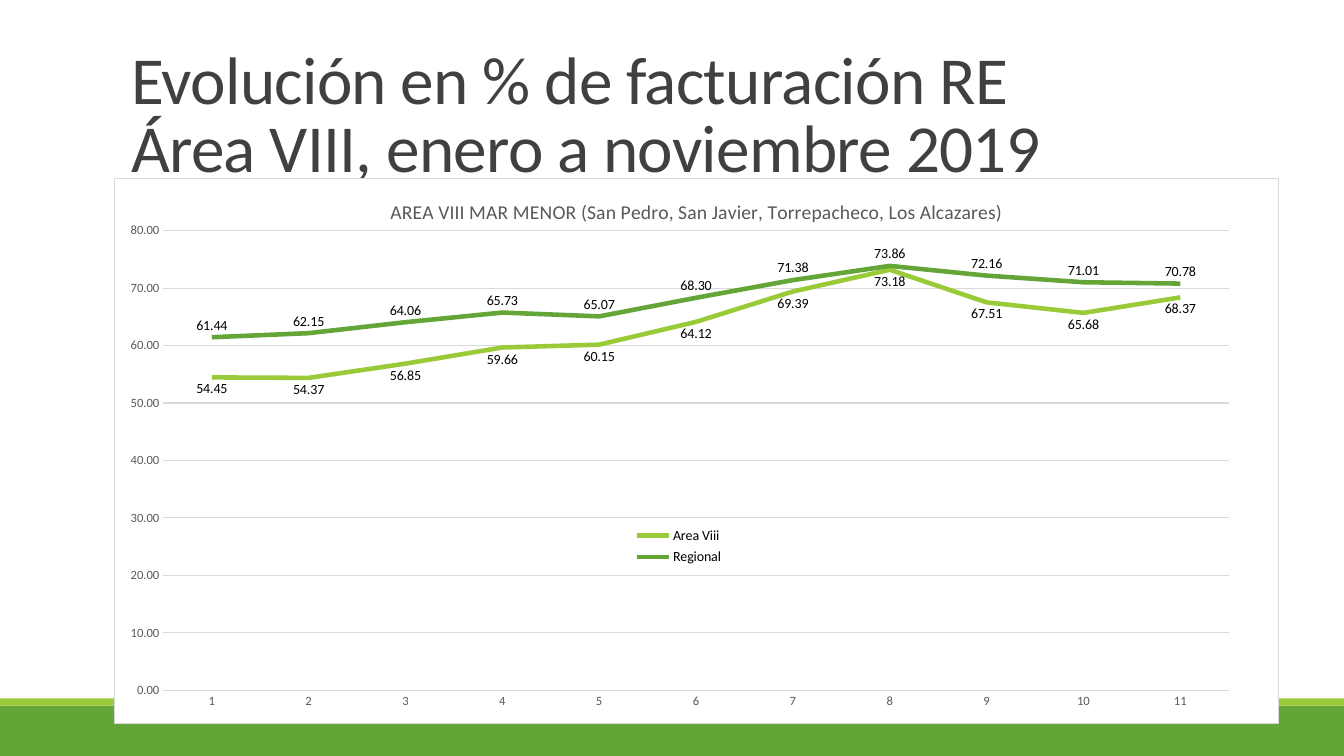
from dataclasses import dataclass

from lxml import etree
from pptx import Presentation
from pptx.chart.data import CategoryChartData
from pptx.dml.color import RGBColor
from pptx.enum import chart as charts, shapes, text
from pptx.oxml import ns
from pptx.util import Inches, Pt


@dataclass(frozen=True)
class Theme:
    font: str = "Calibri"
    lime: str = "99CB38"
    green: str = "63A537"
    heading: str = "404040"
    muted: str = "595959"
    grid: str = "D9D9D9"
    rule: str = "808080"
    black: str = "000000"
    white: str = "FFFFFF"
    heading_size: float = 48
    chart_title_size: float = 14
    label_size: float = 10
    axis_size: float = 9
    series_width: float = 3.25
    hairline: float = 0.75


THEME = Theme()
WIDTH, HEIGHT = 13.33, 7.5
BAND_TOP, STRIPE_HEIGHT = 7, 0.07
BELOW, ABOVE = charts.XL_LABEL_POSITION.BELOW, charts.XL_LABEL_POSITION.ABOVE
BILLING = [
    ("Area Viii", THEME.lime, BELOW, "#,##0.00",
     (54.45, 54.37, 56.85, 59.66, 60.15, 64.12, 69.39, 73.18, 67.51, 65.68, 68.37)),
    ("Regional", THEME.green, ABOVE, "0.00",
     (61.44, 62.15, 64.06, 65.73, 65.07, 68.30, 71.38, 73.86, 72.16, 71.01, 70.78)),
]


def rgb(value):
    return RGBColor.from_string(value)


def inches(box):
    return [Inches(length) for length in box]


def style_font(font, size, color):
    font.name, font.size, font.bold = THEME.font, Pt(size), False
    font.color.rgb = rgb(color)


def style_line(line, color, width):
    line.color.rgb, line.width = rgb(color), Pt(width)


def add_band(page, box, color):
    band = page.shapes.add_shape(shapes.MSO_SHAPE.RECTANGLE, *inches(box))
    band.shadow.inherit = False
    band.fill.solid()
    band.fill.fore_color.rgb = rgb(color)
    band.line.fill.background()


def add_backdrop(page):
    """Draw the footer bands and the rule under the heading."""
    add_band(page, (0, BAND_TOP, WIDTH, HEIGHT - BAND_TOP), THEME.green)
    add_band(page, (0, BAND_TOP - STRIPE_HEIGHT, WIDTH, STRIPE_HEIGHT), THEME.lime)
    rule = page.shapes.add_connector(
        shapes.MSO_CONNECTOR.STRAIGHT, *inches((1.31, 1.9, 12.21, 1.9)))
    style_line(rule.line, THEME.rule, 0.5)
    etree.SubElement(rule._element.spPr, ns.qn("a:effectLst"))


def fill_title(page, box, wording):
    title = page.shapes.title
    title.left, title.top, title.width, title.height = inches(box)
    frame = title.text_frame
    frame.text = wording
    frame.word_wrap = True
    frame.auto_size = text.MSO_AUTO_SIZE.NONE
    frame.vertical_anchor = text.MSO_ANCHOR.BOTTOM
    para = frame.paragraphs[0]
    para.alignment = text.PP_ALIGN.LEFT
    para.line_spacing = 0.85
    style_font(para.font, THEME.heading_size, THEME.heading)
    for span in para.runs:
        span.font._element.set("spc", "-50")


def set_layout(parent, index, box, inner=False):
    """Place a chart part by fractions of the chart's size."""
    for old in parent.findall(ns.qn("c:layout")):
        parent.remove(old)
    layout = etree.Element(ns.qn("c:layout"))
    manual = etree.SubElement(layout, ns.qn("c:manualLayout"))
    settings = [("layoutTarget", "inner")] if inner else []
    settings += [("xMode", "edge"), ("yMode", "edge"), *zip("xywh", box)]
    for name, value in settings:
        etree.SubElement(manual, ns.qn(f"c:{name}")).set("val", str(value))
    parent.insert(index, layout)


def frame_chart(chart):
    """Give the chart area a white fill and a thin border."""
    area = etree.Element(ns.qn("c:spPr"))
    line = etree.Element(ns.qn("a:ln"), w=str(Pt(THEME.hairline)))
    for parent, color in ((area, THEME.white), (line, THEME.grid)):
        fill = etree.SubElement(parent, ns.qn("a:solidFill"))
        etree.SubElement(fill, ns.qn("a:srgbClr"), val=color)
    area.append(line)
    chart._chartSpace.find(ns.qn("c:chart")).addnext(area)


def style_axes(chart):
    for axis in (chart.category_axis, chart.value_axis):
        axis.major_tick_mark = axis.minor_tick_mark = charts.XL_TICK_MARK.NONE
        style_font(axis.tick_labels.font, THEME.axis_size, THEME.muted)
    style_line(chart.category_axis.format.line, THEME.grid, THEME.hairline)
    values = chart.value_axis
    values.minimum_scale, values.maximum_scale, values.major_unit = 0, 80, 10
    values.format.line.fill.background()
    values.has_major_gridlines = True
    style_line(values.major_gridlines.format.line, THEME.grid, THEME.hairline)
    values.tick_labels.number_format = "#,##0.00"
    values.tick_labels.number_format_is_linked = False


def style_series(series, color, position, number_format):
    series.smooth = False
    series.marker.style = charts.XL_MARKER_STYLE.NONE
    style_line(series.format.line, color, THEME.series_width)
    labels = series.data_labels
    labels.show_value = True
    labels.position = position
    labels.number_format = number_format
    labels.number_format_is_linked = False
    style_font(labels.font, THEME.label_size, THEME.black)


def add_billing_chart(page, box, wording):
    data = CategoryChartData()
    data.categories = [str(month) for month in range(1, 12)]
    for name, *_, values in BILLING:
        data.add_series(name, values)
    chart = page.shapes.add_chart(
        charts.XL_CHART_TYPE.LINE, *inches(box), data).chart
    style_font(chart.font, THEME.label_size, THEME.black)
    frame_chart(chart)

    chart.has_title = True
    chart.chart_title.include_in_layout = False
    frame = chart.chart_title.text_frame
    frame.text = wording
    style_font(frame.paragraphs[0].font, THEME.chart_title_size, THEME.muted)

    chart.has_legend = True
    chart.legend.position = charts.XL_LEGEND_POSITION.RIGHT
    chart.legend.include_in_layout = False
    style_font(chart.legend.font, THEME.label_size, THEME.black)
    set_layout(chart.legend._element, 1, (0.44, 0.63, 0.09, 0.09))
    plot_area = chart._chartSpace.find(".//" + ns.qn("c:plotArea"))
    set_layout(plot_area, 0, (0.042, 0.095, 0.915, 0.845), inner=True)

    style_axes(chart)
    chart.plots[0].vary_by_categories = False
    for series, (_, color, position, number_format, _) in zip(chart.plots[0].series, BILLING):
        style_series(series, color, position, number_format)


def main():
    deck = Presentation()
    deck.slide_width, deck.slide_height = Inches(WIDTH), Inches(HEIGHT)
    page = deck.slides.add_slide(deck.slide_layouts.get_by_name("Title Only"))
    add_backdrop(page)
    fill_title(page, (1.2, 0.31, 11, 1.59),
               "Evolución en % de facturación RE\vÁrea VIII, enero a noviembre 2019")
    add_billing_chart(page, (1.13, 1.77, 11.56, 5.41),
                      "AREA VIII MAR MENOR (San Pedro, San Javier, Torrepacheco, Los Alcazares)")
    deck.save("out.pptx")


if __name__ == "__main__":
    main()
